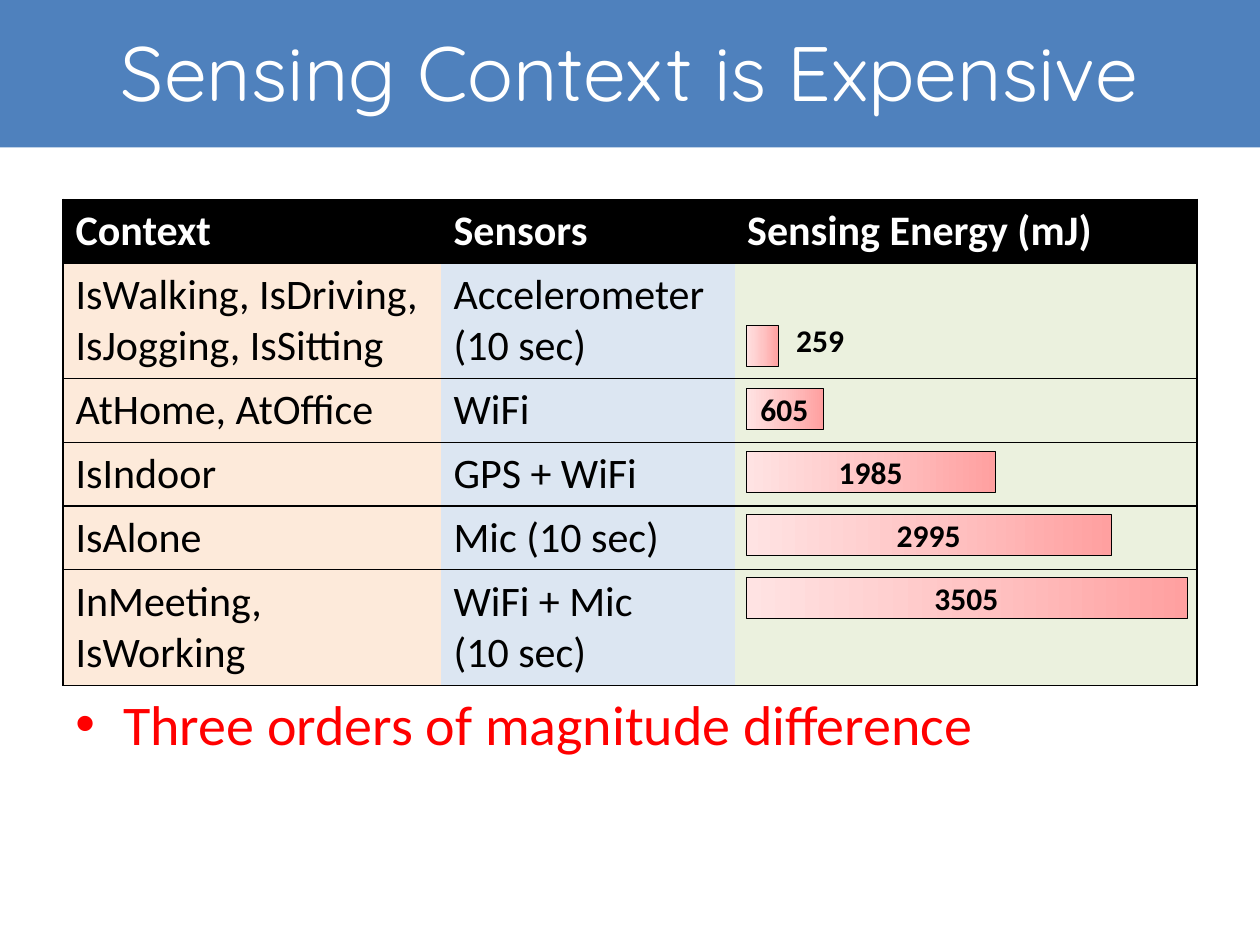
import copy
import dataclasses

import lxml.etree
import pptx
import pptx.dml.color
import pptx.enum.dml
import pptx.enum.shapes
import pptx.enum.text
import pptx.oxml
import pptx.oxml.ns
import pptx.util

COLORS = {
    "band": "4F81BD",
    "white": "FFFFFF",
    "black": "000000",
    "context": "FDEADA",
    "sensors": "DCE6F2",
    "energy": "EBF1DE",
    "bar_dark": "FFA0A0",
    "bar_mid": "FFC5C5",
    "bar_light": "FFE3E3",
    "takeaway": "FF0000",
}
BODY_FONT = "Calibri"
TITLE_FONT = "Quicksand"
PLAIN_TABLE_STYLE = "{2D5ABB26-0587-4C30-8999-92F81FD0307C}"

deck = pptx.Presentation()
deck.slide_width = pptx.util.Inches(10)
deck.slide_height = pptx.util.Inches(7.5)
COLUMN = deck.slide_width / 20
ROW = deck.slide_height / 15
TABLE_COLUMNS = (6, 4.66, 7.34)
LINE_ROWS = {1: 1.01, 2: 1.83}
BAR_LEFT, FIRST_BAR_TOP, BAR_ROWS = 11.84, 5.16, 0.66


@dataclasses.dataclass(frozen=True)
class Area:
    left: float
    top: float
    width: float
    height: float

    def emu(self) -> tuple[int, int, int, int]:
        return (round(self.left * COLUMN), round(self.top * ROW),
                round(self.width * COLUMN), round(self.height * ROW))


@dataclasses.dataclass(frozen=True)
class Measurement:
    context: str
    sensors: str
    energy: int
    bar_columns: float
    lines: int = 1


MEASUREMENTS = (
    Measurement("IsWalking, IsDriving, IsJogging, IsSitting", "Accelerometer \v(10 sec)", 259, 0.52, 2),
    Measurement("AtHome, AtOffice", "WiFi", 605, 1.22),
    Measurement("IsIndoor", "GPS + WiFi", 1985, 3.96),
    Measurement("IsAlone", "Mic (10 sec)", 2995, 5.8),
    Measurement("InMeeting, IsWorking", "WiFi + Mic \v(10 sec)", 3505, 7, 2),
)


def rgb(name: str) -> pptx.dml.color.RGBColor:
    return pptx.dml.color.RGBColor.from_string(COLORS[name])


def write(paragraph, text: str, size: float, color: str, bold: bool = False,
          font: str = BODY_FONT) -> None:
    paragraph.text = text
    paragraph.font.name = font
    paragraph.font.size = pptx.util.Pt(size)
    paragraph.font.bold = bold
    paragraph.font.color.rgb = rgb(color)


def set_borders(cell, sides: str) -> None:
    properties = cell._tc.get_or_add_tcPr()
    for position, side in enumerate(side for side in "LRTB" if side in sides):
        properties.insert(position, pptx.oxml.parse_xml(
            f'<a:ln{side} {pptx.oxml.ns.nsdecls("a")} w="9525"><a:solidFill>'
            f'<a:srgbClr val="{COLORS["black"]}"/></a:solidFill></a:ln{side}>'))


def add_title(slide) -> None:
    band = slide.shapes.add_shape(pptx.enum.shapes.MSO_SHAPE.RECTANGLE, *Area(0, -0.16, 20, 2.5).emu())
    band.shadow.inherit = False
    band.fill.solid()
    band.fill.fore_color.rgb = rgb("band")
    band.line.fill.background()
    slide.shapes._spTree.insert(2, band._element)
    title = slide.shapes.title
    title.left, title.top, title.width, title.height = Area(1, -0.34, 18, 2.94).emu()
    title.text_frame.vertical_anchor = pptx.enum.text.MSO_ANCHOR.MIDDLE
    heading = title.text_frame.paragraphs[0]
    write(heading, "Sensing Context is Expensive", 44, "white", font=TITLE_FONT)
    heading.alignment = pptx.enum.text.PP_ALIGN.CENTER


def add_energy_table(slide) -> None:
    line_counts = (1, *(entry.lines for entry in MEASUREMENTS))
    heights = [LINE_ROWS[count] for count in line_counts]
    area = Area(1, 3.16, sum(TABLE_COLUMNS), sum(heights))
    table = slide.shapes.add_table(len(heights), len(TABLE_COLUMNS), *area.emu()).table
    table.first_row = table.horz_banding = False
    table._tbl.tblPr.find(pptx.oxml.ns.qn("a:tableStyleId")).text = PLAIN_TABLE_STYLE
    for column, width in zip(table.columns, TABLE_COLUMNS):
        column.width = round(width * COLUMN)
    for row, height in zip(table.rows, heights):
        row.height = round(height * ROW)
    content = [("Context", "Sensors", "Sensing Energy (mJ)")]
    content += [(entry.context, entry.sensors, "") for entry in MEASUREMENTS]
    for row_index, texts in enumerate(content):
        header = row_index == 0
        for text, fill, edge, cell in zip(texts, ("context", "sensors", "energy"),
                                          ("L", "", "R"), table.rows[row_index].cells):
            cell.fill.solid()
            cell.fill.fore_color.rgb = rgb("black" if header else fill)
            write(cell.text_frame.paragraphs[0], text, 24, "white" if header else "black", header)
            set_borders(cell, edge + "TB")


def fill_with_gradient(shape) -> None:
    shape.fill.gradient()
    shape.fill.gradient_angle = 180
    first, last = shape.fill.gradient_stops
    first.color.rgb, first.position = rgb("bar_dark"), 0
    last.color.rgb, last.position = rgb("bar_light"), 1
    first._gs.addnext(copy.deepcopy(first._gs))
    middle = shape.fill.gradient_stops[1]
    middle.color.rgb, middle.position = rgb("bar_mid"), 0.5


def add_bar(slide, index: int, entry: Measurement) -> None:
    area = Area(BAR_LEFT, FIRST_BAR_TOP + index, entry.bar_columns, BAR_ROWS)
    bar = slide.shapes.add_shape(pptx.enum.shapes.MSO_SHAPE.FLOWCHART_PROCESS, *area.emu())
    bar.shadow.inherit = False
    fill_with_gradient(bar)
    bar.line.color.rgb = rgb("black")
    bar.line.width = pptx.util.Pt(0.25)
    label = bar
    if entry.bar_columns < 1:
        label = slide.shapes.add_textbox(*Area(12.44, 5, 1.18, 0.8).emu())
    else:
        bar.text_frame.vertical_anchor = pptx.enum.text.MSO_ANCHOR.MIDDLE
    label.text_frame.word_wrap = False
    value = label.text_frame.paragraphs[0]
    write(value, str(entry.energy), 18, "black", True)
    value.alignment = pptx.enum.text.PP_ALIGN.CENTER if label is bar else pptx.enum.text.PP_ALIGN.LEFT


def add_takeaway(slide) -> None:
    box = slide.shapes.add_textbox(*Area(1, 10.84, 18, 4).emu())
    box.text_frame.word_wrap = True
    takeaway = box.text_frame.paragraphs[0]
    write(takeaway, "Three orders of magnitude difference", 32, "takeaway")
    takeaway.space_before = pptx.util.Pt(6.4)
    indent = pptx.util.Inches(0.38)
    properties = takeaway._p.get_or_add_pPr()
    properties.set("marL", str(indent))
    properties.set("indent", str(-indent))
    bullet_font = pptx.oxml.parse_xml(f'<a:buFont {pptx.oxml.ns.nsdecls("a")} typeface="Arial"/>')
    bullet = pptx.oxml.parse_xml(f'<a:buChar {pptx.oxml.ns.nsdecls("a")} char="•"/>')
    properties.find(pptx.oxml.ns.qn("a:spcBef")).addnext(bullet_font)
    bullet_font.addnext(bullet)


def main() -> None:
    slide = deck.slides.add_slide(deck.slide_layouts[5])
    add_title(slide)
    add_energy_table(slide)
    for index, entry in enumerate(MEASUREMENTS):
        add_bar(slide, index, entry)
    add_takeaway(slide)
    deck.save("out.pptx")


if __name__ == "__main__":
    main()
